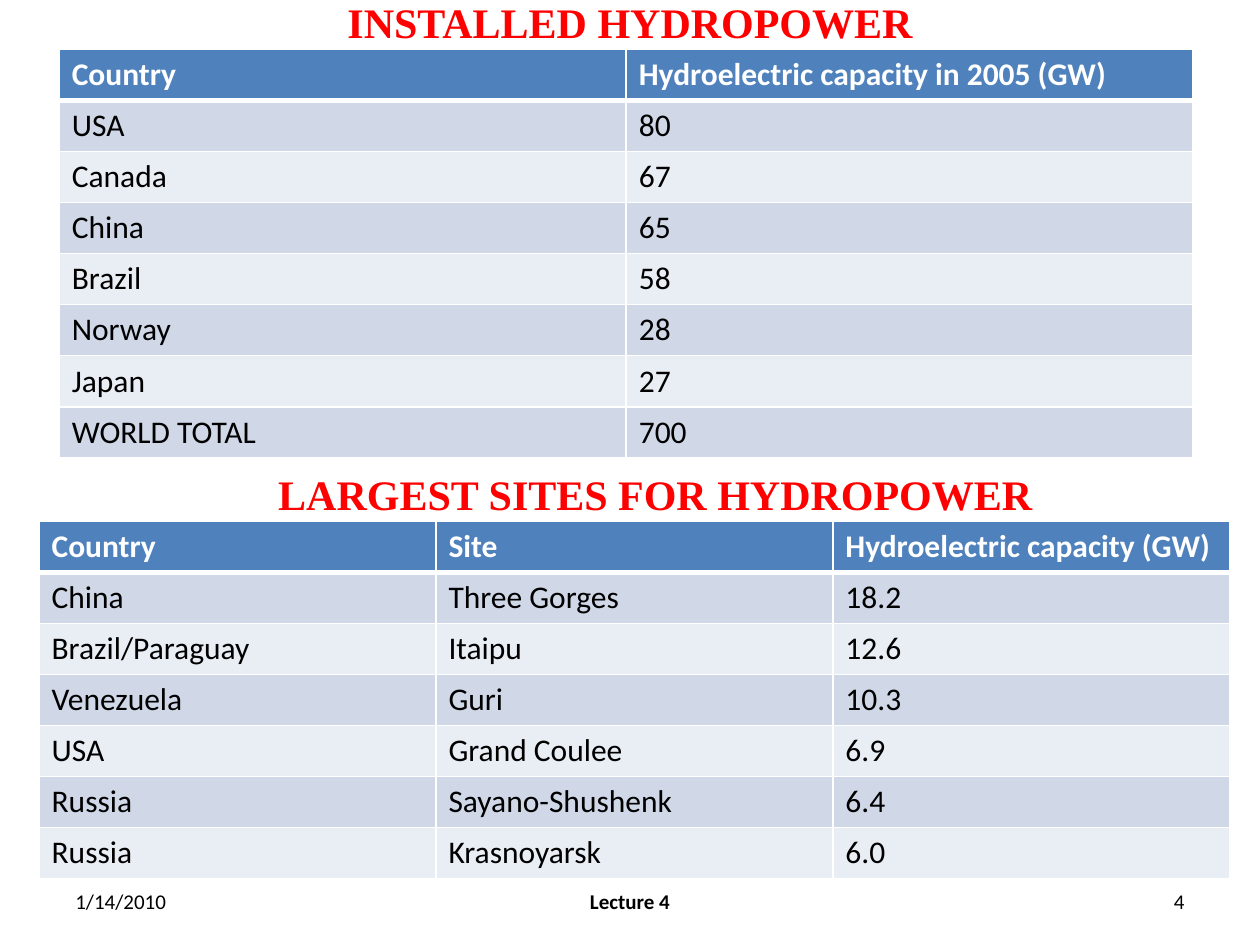
from dataclasses import dataclass

from lxml import etree
from pptx import Presentation
from pptx.dml.color import RGBColor
from pptx.enum import text as t
from pptx.oxml import ns
from pptx.util import Inches, Pt


@dataclass(frozen=True)
class Theme:
    heading_font: str = "Times New Roman"
    body_font: str = "Calibri"
    heading_size: int = 24
    table_size: int = 18
    footer_size: int = 12
    heading: str = "FF0000"
    text: str = "000000"
    white: str = "FFFFFF"
    header_fill: str = "4F81BD"
    bands: tuple = ("D0D8E8", "E9EDF4")


THEME = Theme()
ROW_HEIGHT = Inches(0.405)

CAPACITY = [
    ("Country", "Hydroelectric capacity in 2005 (GW)"),
    ("USA", "80"),
    ("Canada", "67"),
    ("China", "65"),
    ("Brazil", "58"),
    ("Norway", "28"),
    ("Japan", "27"),
    ("WORLD TOTAL", "700"),
]
SITES = [
    ("Country", "Site", "Hydroelectric capacity (GW)"),
    ("China", "Three Gorges", "18.2"),
    ("Brazil/Paraguay", "Itaipu", "12.6"),
    ("Venezuela", "Guri", "10.3"),
    ("USA", "Grand Coulee", "6.9"),
    ("Russia", "Sayano-Shushenk", "6.4"),
    ("Russia", "Krasnoyarsk", "6.0"),
]


def write(tf, words, font, size, color, bold=False, align=t.PP_ALIGN.LEFT):
    tf.text = words
    p = tf.paragraphs[0]
    p.alignment = align
    f = p.runs[0].font
    f.name, f.size, f.bold = font, Pt(size), bold
    f.color.rgb = RGBColor.from_string(color)


def write_heading(tf, words, align=t.PP_ALIGN.LEFT):
    write(tf, words, THEME.heading_font, THEME.heading_size, THEME.heading, True, align)


def set_borders(cell, bottom):
    tcPr = cell._tc.get_or_add_tcPr()
    for side, width in (("L", 1), ("R", 1), ("T", 1), ("B", bottom)):
        ln = etree.SubElement(tcPr, ns.qn(f"a:ln{side}"), w=str(Pt(width)))
        fill = etree.SubElement(ln, ns.qn("a:solidFill"))
        etree.SubElement(fill, ns.qn("a:srgbClr"), val=THEME.white)


def add_title(slide, words, left, top, width, height):
    sp = slide.shapes.title
    sp.left, sp.top, sp.width, sp.height = left, top, width, height
    tf = sp.text_frame
    tf.auto_size = t.MSO_AUTO_SIZE.NONE
    tf.vertical_anchor = t.MSO_ANCHOR.MIDDLE
    write_heading(tf, words, t.PP_ALIGN.CENTER)


def add_subheading(slide, words, left, top, width, height):
    tf = slide.shapes.add_textbox(left, top, width, height).text_frame
    tf.word_wrap = False
    tf.auto_size = t.MSO_AUTO_SIZE.SHAPE_TO_FIT_TEXT
    write_heading(tf, words)


def add_data_table(slide, rows, left, top, width):
    """Table with equal columns, a header row and banded body rows."""
    columns = len(rows[0])
    table = slide.shapes.add_table(
        len(rows), columns, left, top, width, ROW_HEIGHT * len(rows)).table
    for row in table.rows:
        row.height = ROW_HEIGHT
    for i, values in enumerate(rows):
        header = i == 0
        fill = THEME.header_fill if header else THEME.bands[(i - 1) % 2]
        color = THEME.white if header else THEME.text
        for j, value in enumerate(values):
            cell = table.cell(i, j)
            set_borders(cell, 3 if header else 1)
            cell.fill.solid()
            cell.fill.fore_color.rgb = RGBColor.from_string(fill)
            write(cell.text_frame, value, THEME.body_font, THEME.table_size, color, header)


def add_footer(slide, left, top, width, height):
    """Date, lecture and page number at the left, centre and right of the box."""
    side, middle = Inches(2.33), Inches(3.17)
    parts = [
        ("1/14/2010", left, side, False, t.PP_ALIGN.LEFT),
        ("Lecture 4", left + (width - middle) // 2, middle, True, t.PP_ALIGN.CENTER),
        ("4", left + width - side, side, False, t.PP_ALIGN.RIGHT),
    ]
    for words, x, w, bold, align in parts:
        tf = slide.shapes.add_textbox(x, top, w, height).text_frame
        tf.word_wrap = True
        tf.vertical_anchor = t.MSO_ANCHOR.MIDDLE
        write(tf, words, THEME.body_font, THEME.footer_size, THEME.text, bold, align)


def main():
    prs = Presentation()
    prs.slide_width, prs.slide_height = Inches(10), Inches(7.5)
    slide = prs.slides.add_slide(prs.slide_layouts[5])
    add_title(slide, "INSTALLED HYDROPOWER",
              Inches(0.5), Inches(0), Inches(9), Inches(0.35))
    add_data_table(slide, CAPACITY, Inches(0.47), Inches(0.39), Inches(9))
    add_footer(slide, Inches(0.5), Inches(6.95), Inches(9), Inches(0.4))
    add_subheading(slide, "LARGEST SITES FOR HYDROPOWER",
                   Inches(2.11), Inches(3.67), Inches(6.25), Inches(0.5))
    add_data_table(slide, SITES, Inches(0.31), Inches(4.14), Inches(9.45))
    prs.save("out.pptx")


if __name__ == "__main__":
    main()
